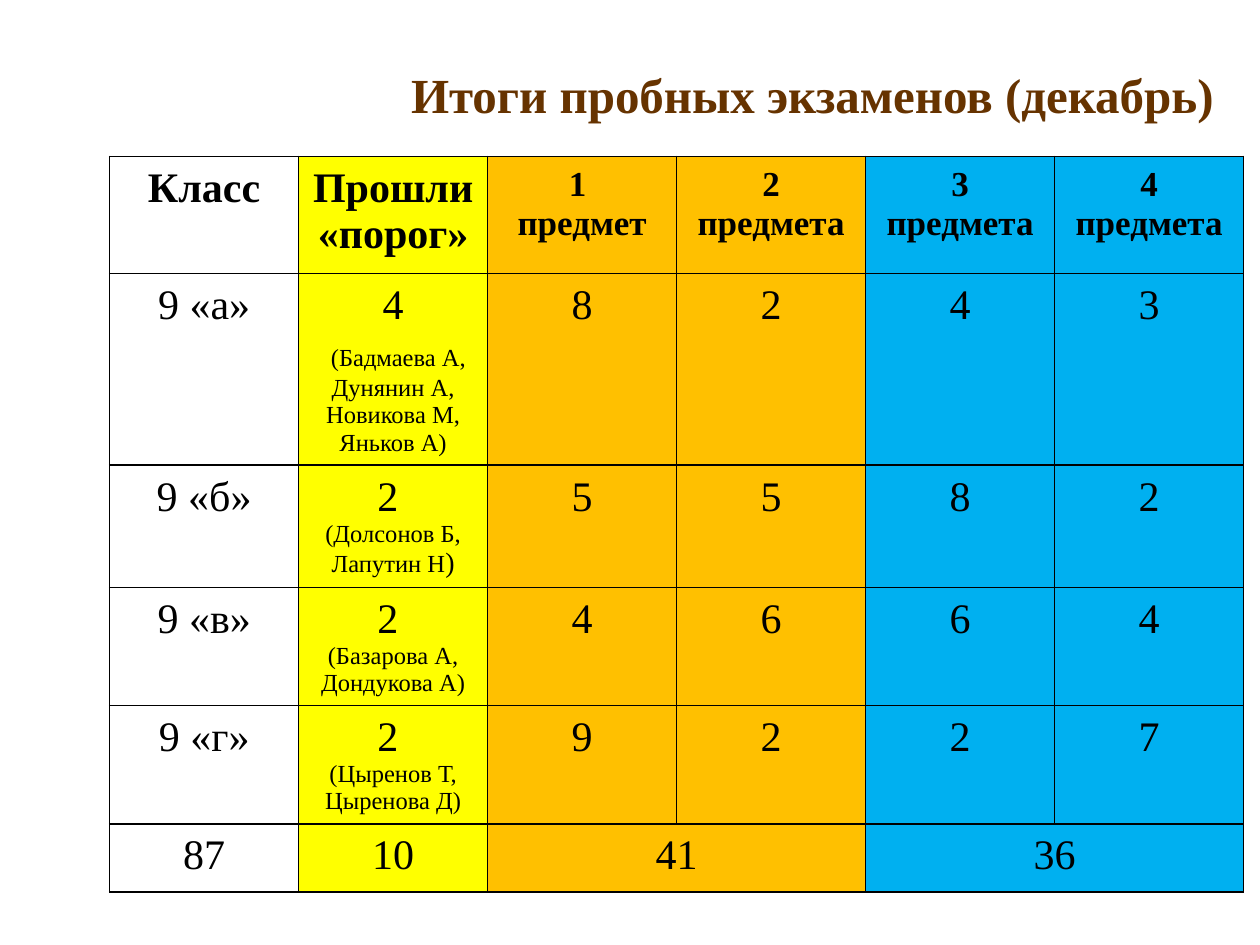
from pptx import Presentation
from pptx.dml.color import RGBColor
from pptx.enum.shapes import MSO_SHAPE as Shape
from pptx.enum.text import MSO_ANCHOR as Anchor, PP_ALIGN as Align
from pptx.oxml import parse_xml
from pptx.oxml.ns import nsdecls
from pptx.util import Inches, Pt

WHITE = RGBColor(0xFF, 0xFF, 0xFF)
BLACK = RGBColor(0, 0, 0)
BROWN = RGBColor(0x66, 0x33, 0)
YELLOW = RGBColor(0xFF, 0xFF, 0)
ORANGE = RGBColor(0xFF, 0xC0, 0)
BLUE = RGBColor(0, 0xB0, 0xF0)
FILLS = [None, YELLOW, ORANGE, ORANGE, BLUE, BLUE]

HEADS = [["Класс"], ["Прошли «порог»"], ["1 ", "предмет"],
         ["2 предмета"], ["3 предмета"], ["4 предмета"]]
GRADES = [
    ("9 «а»", "4", [(" ", 24), ("(Бадмаева А, Дунянин А, Новикова М, Яньков А)", 14)], "8243"),
    ("9 «б»", "2 ", [("(Долсонов Б, Лапутин Н", 14), (")", 16)], "5582"),
    ("9 «в»", "2 ", [("(Базарова А, Дондукова А)", 14)], "4664"),
    ("9 «г»", "2 ", [("(Цыренов Т, Цыренова Д)", 14)], "9227"),
]
TOTALS = [(0, "87"), (1, "10"), (2, "41"), (4, "36")]


def write(frame, paras, bold=False, color=BLACK, align=Align.CENTER):
    for i, runs in enumerate(paras):
        para = frame.add_paragraph() if i else frame.paragraphs[0]
        para.alignment = align
        for text, size in runs:
            run = para.add_run()
            run.text = text
            font = run.font
            font.name = "Times New Roman"
            font.size = Pt(size)
            font.bold = bold
            font.color.rgb = color


def edge(cell):
    props = cell._tc.get_or_add_tcPr()
    for i, side in enumerate(("lnL", "lnR", "lnT", "lnB")):
        props.insert(i, parse_xml(
            f'<a:{side} {nsdecls("a")} w="12700"><a:solidFill>'
            f'<a:srgbClr val="{BLACK}"/></a:solidFill></a:{side}>'))


deck = Presentation()
deck.slide_width = Inches(10)
deck.slide_height = Inches(7.5)
slide = deck.slides.add_slide(deck.slide_layouts[6])

title = slide.shapes.add_shape(
    Shape.RECTANGLE, Inches(1.93), Inches(0.3), Inches(7.8), Inches(0.89))
title.shadow.inherit = False
title.fill.solid()
title.fill.fore_color.rgb = WHITE
title.line.color.rgb = WHITE
title.line.width = Pt(1.5)
title.text_frame.word_wrap = True
title.text_frame.vertical_anchor = Anchor.MIDDLE
write(title.text_frame, [[("Итоги пробных экзаменов (декабрь)", 28)]],
      True, BROWN, Align.RIGHT)

table = slide.shapes.add_table(
    6, 6, Inches(0.87), Inches(1.24), Inches(9), Inches(3.63)).table
table.horz_banding = False
for col in table.columns:
    col.width = Inches(1.5)
for i, row in enumerate(table.rows):
    row.height = Inches(0.54 if i else 0.93)
    for cell, fill in zip(row.cells, FILLS):
        cell.margin_left = cell.margin_right = Inches(0.1)
        cell.margin_top = cell.margin_bottom = Inches(0.07)
        if fill is None:
            cell.fill.background()
        else:
            cell.fill.solid()
            cell.fill.fore_color.rgb = fill
        edge(cell)

for c, lines in enumerate(HEADS):
    size = 24 if c < 2 else 20
    write(table.cell(0, c).text_frame, [[(line, size)] for line in lines], True)

for r, (grade, count, names, marks) in enumerate(GRADES, 1):
    write(table.cell(r, 0).text_frame, [[(grade, 24)]])
    write(table.cell(r, 1).text_frame, [[(count, 24)], names])
    for c, mark in enumerate(marks, 2):
        write(table.cell(r, c).text_frame, [[(mark, 24)]])

for c, total in TOTALS:
    if c > 1:
        table.cell(5, c).merge(table.cell(5, c + 1))
    write(table.cell(5, c).text_frame, [[(total, 24)]])

deck.save("out.pptx")
